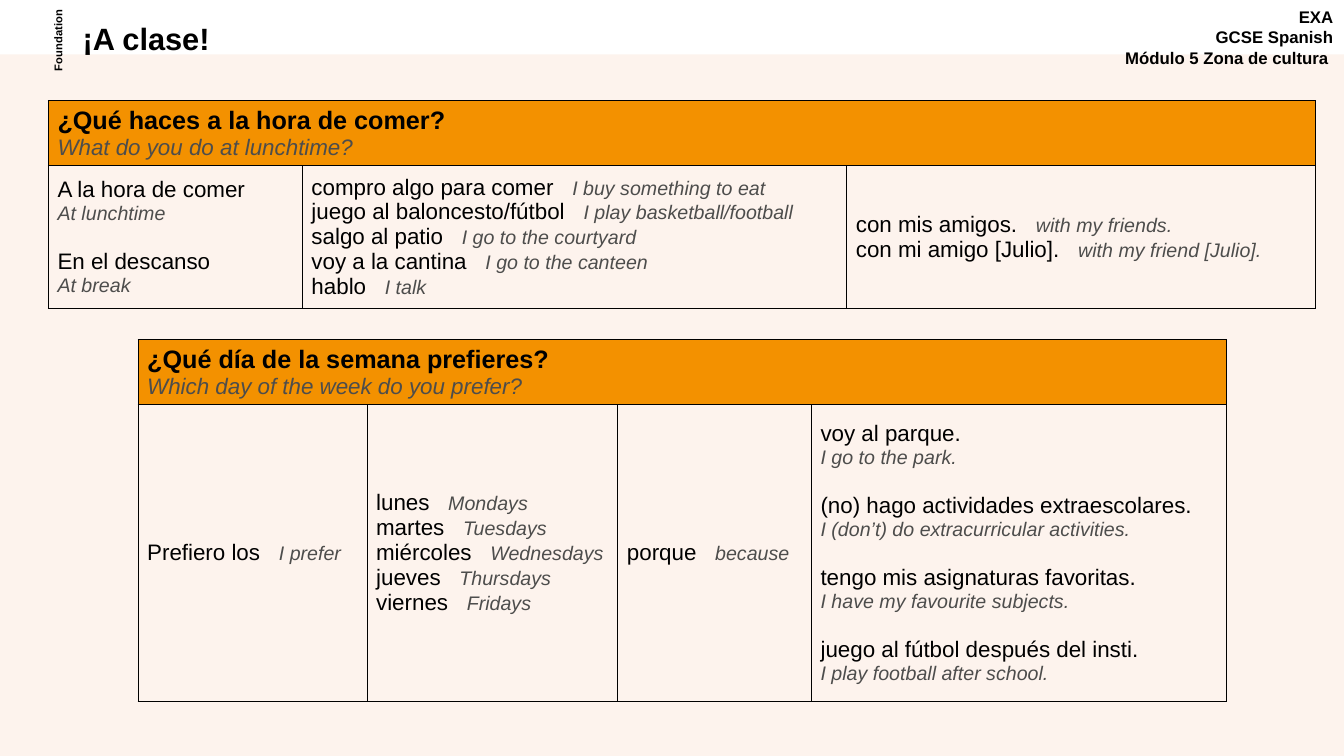
"""Build a Spanish sentence-builder page about school lunchtimes and favourite days."""
from dataclasses import dataclass

from lxml.etree import SubElement
from pptx import Presentation
from pptx.dml.color import RGBColor
from pptx.enum.shapes import MSO_SHAPE as Preset
from pptx.enum.text import MSO_ANCHOR as Anchor, MSO_AUTO_SIZE as AutoSize, PP_ALIGN as Align
from pptx.oxml.ns import qn
from pptx.util import Cm, Pt

BLACK = RGBColor(0x00, 0x00, 0x00)
GREY = RGBColor(0x4D, 0x4D, 0x4C)
ORANGE = RGBColor(0xF3, 0x91, 0x00)
CREAM = RGBColor(0xFD, 0xF3, 0xED)

PAGE_WIDTH, PAGE_HEIGHT, BAND_TOP = 33.87, 19.05, 1.37
HEADER_HEIGHT = 1.55
GAP_SPACING = "890"


@dataclass(frozen=True)
class Phrase:
    spanish: str
    english: str


@dataclass(frozen=True)
class Column:
    width: float
    phrases: tuple[Phrase, ...]
    stacked: bool = False


@dataclass(frozen=True)
class Grid:
    left: float
    top: float
    body_height: float
    heading: Phrase
    columns: tuple[Column, ...]


@dataclass(frozen=True)
class Label:
    lines: tuple[str, ...]
    left: float
    top: float
    width: float
    height: float
    size: float
    align: Align
    rotation: float = 0


LABELS = (
    Label(("EXA", "GCSE Spanish", "Módulo 5 Zona de cultura "),
          27.91, 0.05, 5.94, 1.96, 12, Align.RIGHT),
    Label(("Foundation",), 0.15, 0.74, 2.59, 0.56, 8, Align.CENTER, 270),
)

GRIDS = (
    Grid(1.22, 2.54, 3.35, Phrase("¿Qué haces a la hora de comer?", "What do you do at lunchtime?"), (
        Column(6.4, (
            Phrase("A la hora de comer", "At lunchtime"),
            Phrase("En el descanso", "At break"),
        ), stacked=True),
        Column(13.72, (
            Phrase("compro algo para comer", "I buy something to eat"),
            Phrase("juego al baloncesto/fútbol", "I play basketball/football"),
            Phrase("salgo al patio", "I go to the courtyard"),
            Phrase("voy a la cantina", "I go to the canteen"),
            Phrase("hablo", "I talk"),
        )),
        Column(11.81, (
            Phrase("con mis amigos.", "with my friends."),
            Phrase("con mi amigo [Julio].", "with my friend [Julio]."),
        )),
    )),
    Grid(3.48, 8.56, 7.47, Phrase("¿Qué día de la semana prefieres?", "Which day of the week do you prefer?"), (
        Column(5.77, (Phrase("Prefiero los", "I prefer"),)),
        Column(6.32, (
            Phrase("lunes", "Mondays"),
            Phrase("martes", "Tuesdays"),
            Phrase("miércoles", "Wednesdays"),
            Phrase("jueves", "Thursdays"),
            Phrase("viernes", "Fridays"),
        )),
        Column(4.88, (Phrase("porque", "because"),)),
        Column(10.46, (
            Phrase("voy al parque.", "I go to the park."),
            Phrase("(no) hago actividades extraescolares.", "I (don’t) do extracurricular activities."),
            Phrase("tengo mis asignaturas favoritas.", "I have my favourite subjects."),
            Phrase("juego al fútbol después del insti.", "I play football after school."),
        ), stacked=True),
    )),
)


def add_span(para, text: str, size: float, color: RGBColor = BLACK, bold: bool = False, italic: bool = False):
    """Add one formatted run and return it."""
    span = para.add_run()
    span.text = text
    settings = {"name": "Arial", "size": Pt(size), "bold": bold, "italic": italic}
    for name, value in settings.items():
        setattr(span.font, name, value)
    span.font.color.rgb = color
    return span


def next_para(frame, index: int):
    """Return the first paragraph for index zero, otherwise a new one."""
    return frame.add_paragraph() if index else frame.paragraphs[0]


def write_stacked(frame, phrases: tuple[Phrase, ...], size: float = 16, small: float = 14, bold: bool = False) -> None:
    """Write each translation on the line below its phrase."""
    for index, phrase in enumerate(phrases):
        para = next_para(frame, index)
        if index:
            para.space_before = Pt(18)
        add_span(para, phrase.spanish, size, bold=bold)
        add_span(frame.add_paragraph(), phrase.english, small, GREY, italic=True)


def write_inline(frame, phrases: tuple[Phrase, ...]) -> None:
    """Write each translation after its phrase, set off by a widened space."""
    for index, phrase in enumerate(phrases):
        para = next_para(frame, index)
        add_span(para, phrase.spanish, 16)
        gap = add_span(para, " ", 16)
        gap._r.get_or_add_rPr().set("spc", GAP_SPACING)
        add_span(para, phrase.english, 14, GREY, italic=True)


def format_cell(cell) -> None:
    """Give a cell its margins, anchor and thin black borders."""
    settings = {"margin_left": Cm(0.23), "margin_right": Cm(0.23), "margin_top": Cm(0.1),
                "margin_bottom": Cm(0.1), "vertical_anchor": Anchor.MIDDLE}
    for name, value in settings.items():
        setattr(cell, name, value)
    properties = cell._tc.get_or_add_tcPr()
    for side in ("a:lnL", "a:lnR", "a:lnT", "a:lnB"):
        line = SubElement(properties, qn(side), w=str(Pt(0.75)))
        SubElement(SubElement(line, qn("a:solidFill")), qn("a:srgbClr"), val=str(BLACK))
    cell.fill.background()


def add_grid(page, grid: Grid) -> None:
    """Draw a phrase table with one merged heading row."""
    width = sum(column.width for column in grid.columns)
    table = page.shapes.add_table(2, len(grid.columns), Cm(grid.left), Cm(grid.top), Cm(width),
                                  Cm(HEADER_HEIGHT + grid.body_height)).table
    table.first_row = table.horz_banding = False
    for row, height in zip(table.rows, (HEADER_HEIGHT, grid.body_height)):
        row.height = Cm(height)
    for cell in table.iter_cells():
        format_cell(cell)
    heading = table.cell(0, 0)
    heading.merge(table.cell(0, len(grid.columns) - 1))
    heading.fill.solid()
    heading.fill.fore_color.rgb = ORANGE
    write_stacked(heading.text_frame, (grid.heading,), 18, 16, bold=True)
    for index, column in enumerate(grid.columns):
        table.columns[index].width = Cm(column.width)
        write = write_stacked if column.stacked else write_inline
        write(table.cell(1, index).text_frame, column.phrases)


def add_label(page, label: Label) -> None:
    """Draw a bold text label."""
    box = page.shapes.add_textbox(Cm(label.left), Cm(label.top), Cm(label.width), Cm(label.height))
    box.rotation = label.rotation
    box.text_frame.word_wrap = True
    for index, text in enumerate(label.lines):
        para = next_para(box.text_frame, index)
        para.alignment = label.align
        add_span(para, text, label.size, bold=True)


def add_title(page, text: str) -> None:
    """Move and fill the title placeholder."""
    title = page.shapes.title
    place = {"left": Cm(1.83), "top": Cm(0.48), "width": Cm(17.48), "height": Cm(1.09)}
    for name, value in place.items():
        setattr(title, name, value)
    frame = title.text_frame
    frame.vertical_anchor, frame.auto_size = Anchor.TOP, AutoSize.NONE
    para = frame.paragraphs[0]
    para.alignment, para.line_spacing = Align.LEFT, 0.9
    add_span(para, text, 22, bold=True)


def add_band(page) -> None:
    """Draw the cream area behind everything else."""
    band = page.shapes.add_shape(Preset.RECTANGLE, 0, Cm(BAND_TOP), Cm(PAGE_WIDTH), Cm(PAGE_HEIGHT - BAND_TOP))
    band.shadow.inherit = False
    band.fill.solid()
    band.fill.fore_color.rgb = CREAM
    band.line.fill.background()
    page.shapes._spTree.insert(2, band._element)


def main() -> None:
    """Build and save the deck."""
    deck = Presentation()
    deck.slide_width, deck.slide_height = Cm(PAGE_WIDTH), Cm(PAGE_HEIGHT)
    page = deck.slides.add_slide(deck.slide_layouts[5])
    add_band(page)
    add_title(page, "¡A clase!")
    for label in LABELS:
        add_label(page, label)
    for grid in GRIDS:
        add_grid(page, grid)
    deck.save("out.pptx")


if __name__ == "__main__":
    main()
